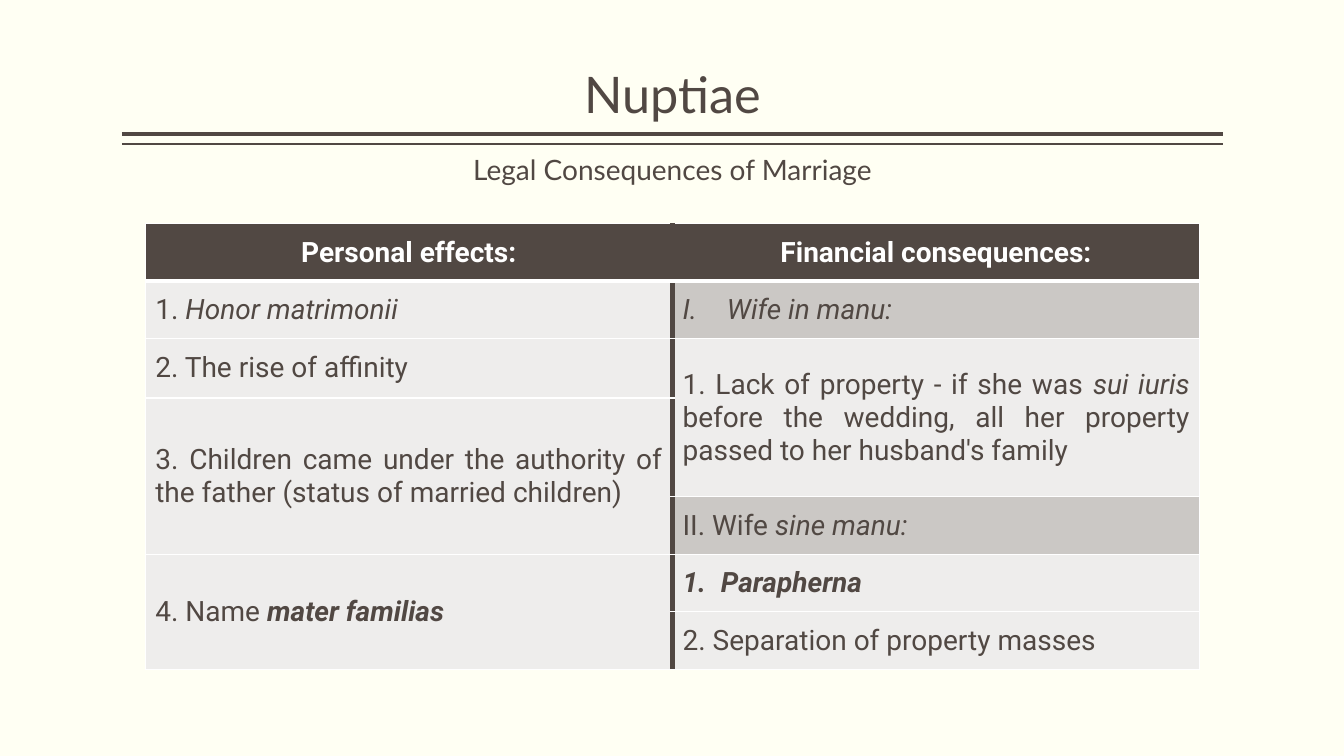
from lxml.etree import SubElement
from pptx import Presentation
from pptx.dml.color import RGBColor
from pptx.enum.shapes import MSO_CONNECTOR
from pptx.enum.text import MSO_ANCHOR, PP_ALIGN
from pptx.oxml.ns import qn
from pptx.util import Inches, Pt

COLORS = {
    "background": "FFFFF3",
    "brown": "514843",
    "white": "FFFFFF",
    "pale": "EEEDEC",
    "grey": "CBC8C5",
}

TITLE = "Nuptiae"
SUBTITLE = "Legal Consequences of Marriage"

# Each entry: first row, rows covered, fill, runs of (text, style), format
HEADER = {"align": PP_ALIGN.CENTER, "color": "white"}
JUSTIFIED = {"align": PP_ALIGN.JUSTIFY}
PERSONAL = [
    (0, 1, "brown", [("Personal effects:", "b")], HEADER),
    (1, 1, "pale", [("1. ", ""), ("Honor matrimonii", "i")], {}),
    (2, 1, "pale", [("2. The rise of affinity", "")], {}),
    (3, 2, "pale", [("3. Children came under the authority of the father "
                     "(status of married children)", "")], JUSTIFIED),
    (5, 2, "pale", [("4. Name ", ""), ("mater familias", "bi")], {}),
]
FINANCIAL = [
    (0, 1, "brown", [("Financial consequences:", "b")], HEADER),
    (1, 1, "grey", [("Wife in manu:", "i")], {"numbering": ("romanUcPeriod", 0.44)}),
    (2, 2, "pale", [("1. Lack of property - if she was ", ""), ("sui iuris ", "i"),
                    ("before the wedding, all her property passed to her "
                     "husband's family", "")], JUSTIFIED),
    (4, 1, "grey", [("II. Wife ", ""), ("sine manu:", "i")], {}),
    (5, 1, "pale", [("Parapherna", "bi")], {"numbering": ("arabicPeriod", 0.38)}),
    (6, 1, "pale", [("2. Separation of property masses", "")], {}),
]
ROW_HEIGHTS = [0.57, 0.57, 0.59, 0.98, 0.57, 0.57, 0.57]
COLUMN_WIDTH = 5.23
TABLE_LEFT, TABLE_TOP = 1.44, 2.22

BAND_LEFT, BAND_WIDTH = 1.21, 10.92
RULES = [(1.33, 3), (1.43, 1)]  # height on the slide, line width


def rgb(name):
    return RGBColor.from_string(COLORS[name])


def write(frame, runs, size=20, font="Roboto", color="brown", align=PP_ALIGN.LEFT,
          spacing=None, numbering=None):
    """Fill a text frame with one paragraph of (text, style) runs."""
    frame.word_wrap = True
    paragraph = frame.paragraphs[0]
    paragraph.alignment = align
    if spacing:
        paragraph.line_spacing = spacing
    if numbering:
        scheme, indent = numbering
        properties = paragraph._p.get_or_add_pPr()
        properties.set("marL", str(Inches(indent)))
        properties.set("indent", str(-Inches(indent)))
        SubElement(properties, qn("a:buFont"), typeface="+mj-lt")
        SubElement(properties, qn("a:buAutoNum"), type=scheme)
    for text, style in runs:
        run = paragraph.add_run()
        run.text = text
        run.font.size = Pt(size)
        run.font.name = font
        run.font.color.rgb = rgb(color)
        run.font.bold = "b" in style
        run.font.italic = "i" in style


def add_heading(slide, text, top, height, anchor, **text_format):
    box = slide.shapes.add_textbox(Inches(BAND_LEFT), Inches(top),
                                   Inches(BAND_WIDTH), Inches(height))
    box.text_frame.vertical_anchor = anchor
    write(box.text_frame, [(text, "")], font="Lato", align=PP_ALIGN.CENTER, **text_format)


def add_rule(slide, top, width):
    rule = slide.shapes.add_connector(
        MSO_CONNECTOR.STRAIGHT, Inches(BAND_LEFT), Inches(top),
        Inches(BAND_LEFT + BAND_WIDTH), Inches(top))
    rule.line.color.rgb = rgb("brown")
    rule.line.width = Pt(width)
    SubElement(rule._element.spPr, qn("a:effectLst"))


def set_borders(cell, row, column):
    """Draw white cell borders with a thick brown divider between the columns."""
    divider, thin = ("brown", 4.5), ("white", 1)
    below_header = ("white", 3)
    borders = {
        "lnL": divider if column == 1 else thin,
        "lnR": divider if column == 0 else thin,
        "lnT": below_header if row == 1 else thin,
        "lnB": below_header if row == 0 else thin,
    }
    for side, (color, width) in borders.items():
        line = SubElement(cell._tc.get_or_add_tcPr(), qn(f"a:{side}"), w=str(Pt(width)))
        fill = SubElement(line, qn("a:solidFill"))
        SubElement(fill, qn("a:srgbClr"), val=COLORS[color])


def add_consequences(slide):
    columns = [PERSONAL, FINANCIAL]
    table = slide.shapes.add_table(
        len(ROW_HEIGHTS), len(columns), Inches(TABLE_LEFT), Inches(TABLE_TOP),
        Inches(COLUMN_WIDTH * len(columns)), Inches(sum(ROW_HEIGHTS))).table
    table.horz_banding = False
    for row, height in zip(table.rows, ROW_HEIGHTS):
        row.height = Inches(height)
    for column, entries in enumerate(columns):
        table.columns[column].width = Inches(COLUMN_WIDTH)
        for first, count, fill, runs, text_format in entries:
            for row in range(first, first + count):
                cell = table.cell(row, column)
                set_borders(cell, row, column)
                cell.fill.solid()
                cell.fill.fore_color.rgb = rgb(fill)
            top_cell = table.cell(first, column)
            if count > 1:
                top_cell.merge(table.cell(first + count - 1, column))
            top_cell.vertical_anchor = MSO_ANCHOR.MIDDLE
            write(top_cell.text_frame, runs, **text_format)


def main():
    deck = Presentation()
    deck.slide_width, deck.slide_height = Inches(13.33), Inches(7.5)
    slide = deck.slides.add_slide(deck.slide_layouts[6])
    slide.background.fill.solid()
    slide.background.fill.fore_color.rgb = rgb("background")
    for top, width in RULES:
        add_rule(slide, top, width)
    add_heading(slide, TITLE, 0.08, 1.2, MSO_ANCHOR.BOTTOM, size=36, spacing=0.9)
    add_heading(slide, SUBTITLE, 1.46, 0.44, MSO_ANCHOR.TOP)
    add_consequences(slide)
    deck.save("out.pptx")


if __name__ == "__main__":
    main()
